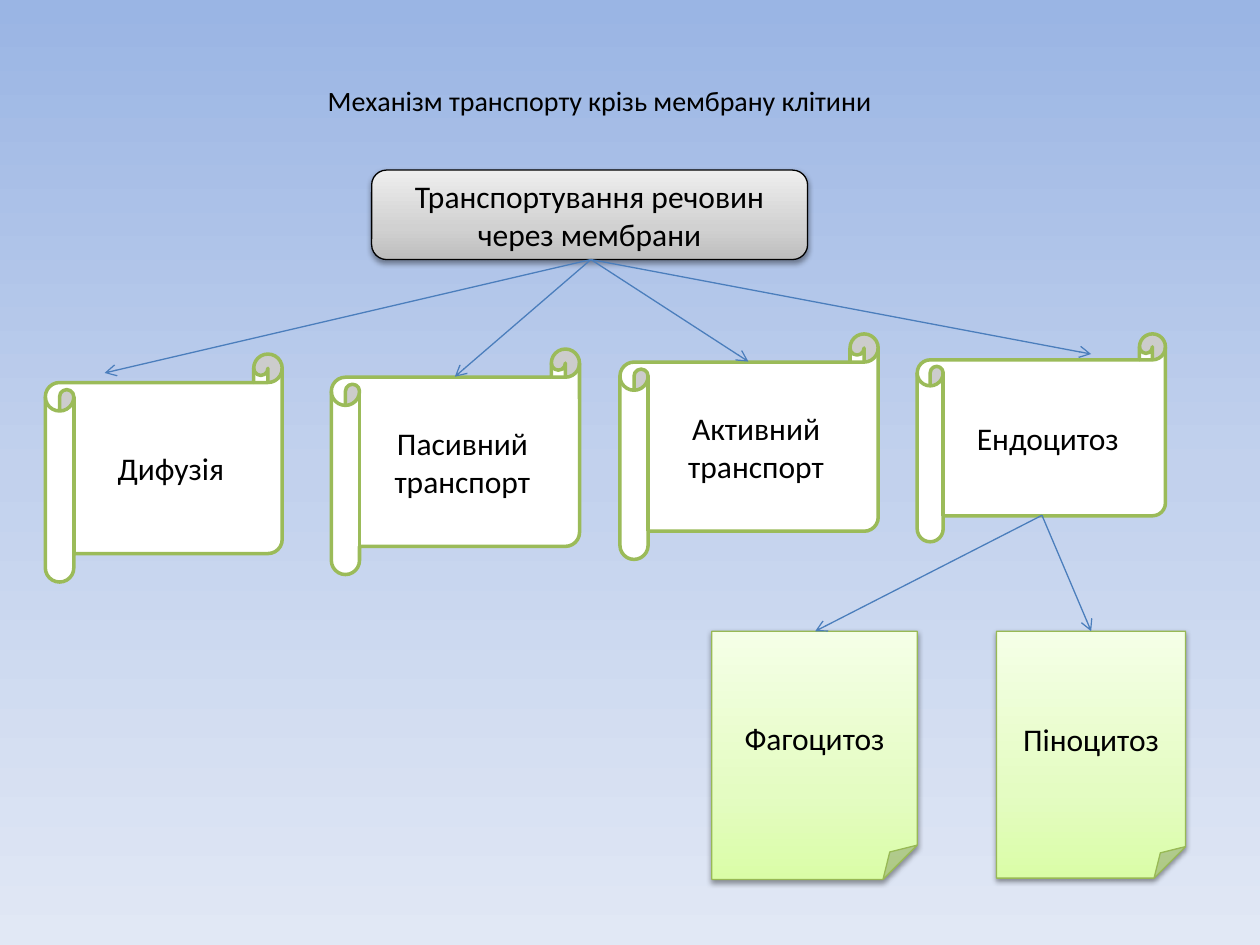
from lxml import etree
from pptx import Presentation
from pptx.dml.color import RGBColor
from pptx.enum import shapes, text
from pptx.oxml.ns import qn
from pptx.util import Inches, Pt

FONT = "Calibri"
COLORS = {
    "text": "000000",
    "paper": "FFFFFF",
    "scroll_line": "9BBB59",
    "note_line": "98B955",
    "arrow": "4B7EBC",
}
GRADIENTS = {
    "sky": [(0, "9AB5E4"), (50, "C2D1ED"), (100, "E1E8F5")],
    "grey": [(0, "BDBDBD"), (35, "D1D1D1"), (100, "EEEEEE")],
    "green": [(0, "DAFDA7"), (35, "E4FCC2"), (100, "F5FFE7")],
}
ROOT_BOTTOM = (4.69, 2.06)
ENDOCYTOSIS_BOTTOM = (8.27, 4.09)
SCROLLS = [
    ("Дифузія", (0.36, 2.81, 1.88, 1.81)),
    ("Пасивний транспорт", (2.63, 2.77, 1.97, 1.79)),
    ("Активний транспорт", (4.92, 2.65, 2.05, 1.79)),
    ("Ендоцитоз", (7.28, 2.65, 1.97, 1.65)),
]
NOTES = [
    ("Фагоцитоз", (5.65, 5.01, 1.63, 1.97)),
    ("Піноцитоз", (7.91, 5.01, 1.5, 1.96)),
]
ARROWS = [
    (ROOT_BOTTOM, [(0.83, 2.96), (8.66, 2.81), (3.61, 2.99), (5.94, 2.87)]),
    (ENDOCYTOSIS_BOTTOM, [(6.47, 5.01), (8.66, 5.01)]),
]


def rgb(name):
    return RGBColor.from_string(COLORS[name])


def set_gradient(fill, element, name, angle):
    """Give a fill its colour stops; angle is clockwise in degrees."""
    fill.gradient()
    grad = element.find(".//" + qn("a:gradFill"))
    stops = grad.find(qn("a:gsLst"))
    for stop in list(stops):
        stops.remove(stop)
    for pos, color in GRADIENTS[name]:
        gs = etree.SubElement(stops, qn("a:gs"), pos=str(pos * 1000))
        etree.SubElement(gs, qn("a:srgbClr"), val=color)
    grad.find(qn("a:lin")).set("ang", str(angle * 60000))


def add_shadow(sp):
    effects = sp._element.spPr.find(qn("a:effectLst"))
    shadow = etree.SubElement(
        effects, qn("a:outerShdw"), blurRad=str(Pt(3.1)), dist=str(Pt(1.6)),
        dir=str(90 * 60000), rotWithShape="0")
    color = etree.SubElement(shadow, qn("a:srgbClr"), val="000000")
    etree.SubElement(color, qn("a:alpha"), val="38000")


def write(sp, content, size):
    tf = sp.text_frame
    tf.word_wrap = True
    tf.vertical_anchor = text.MSO_ANCHOR.MIDDLE
    p = tf.paragraphs[0]
    p.alignment = text.PP_ALIGN.CENTER
    r = p.add_run()
    r.text = content
    r.font.size = Pt(size)
    r.font.name = FONT
    r.font.color.rgb = rgb("text")


def add_title(s, content):
    title = s.shapes.title
    title.left, title.top = Inches(0.51), Inches(0.44)
    title.width, title.height = Inches(8.5), Inches(0.71)
    write(title, content, 16)


def add_box(s, kind, content, box, line, width, gradient=None):
    """Add a labelled shape: white, or with a gradient and a shadow."""
    sp = s.shapes.add_shape(kind, *map(Inches, box))
    sp.shadow.inherit = False
    sp.line.color.rgb = rgb(line)
    sp.line.width = Pt(width)
    if gradient:
        set_gradient(sp.fill, sp._element, gradient, 270)
        add_shadow(sp)
    else:
        sp.fill.solid()
        sp.fill.fore_color.rgb = rgb("paper")
    write(sp, content, 18)


def add_arrow(s, start, end):
    line = s.shapes.add_connector(
        shapes.MSO_CONNECTOR.STRAIGHT, *map(Inches, start + end))
    line.line.color.rgb = rgb("arrow")
    line.line.width = Pt(0.75)
    etree.SubElement(line.line._get_or_add_ln(), qn("a:tailEnd"), type="arrow")
    etree.SubElement(line._element.spPr, qn("a:effectLst"))


def main():
    prs = Presentation()
    prs.slide_width, prs.slide_height = Inches(10), Inches(7.5)
    s = prs.slides.add_slide(prs.slide_layouts[5])
    set_gradient(s.background.fill, s.element, "sky", 90)

    add_title(s, "Механізм транспорту крізь мембрану клітини")
    kinds = shapes.MSO_SHAPE
    add_box(s, kinds.ROUNDED_RECTANGLE, "Транспортування речовин через мембрани",
            (2.95, 1.35, 3.46, 0.71), "text", 0.75, "grey")
    for content, box in SCROLLS:
        add_box(s, kinds.HORIZONTAL_SCROLL, content, box, "scroll_line", 2)
    for content, box in NOTES:
        add_box(s, kinds.FOLDED_CORNER, content, box, "note_line", 0.75, "green")
    for start, ends in ARROWS:
        for end in ends:
            add_arrow(s, start, end)
    prs.save("out.pptx")


if __name__ == "__main__":
    main()
